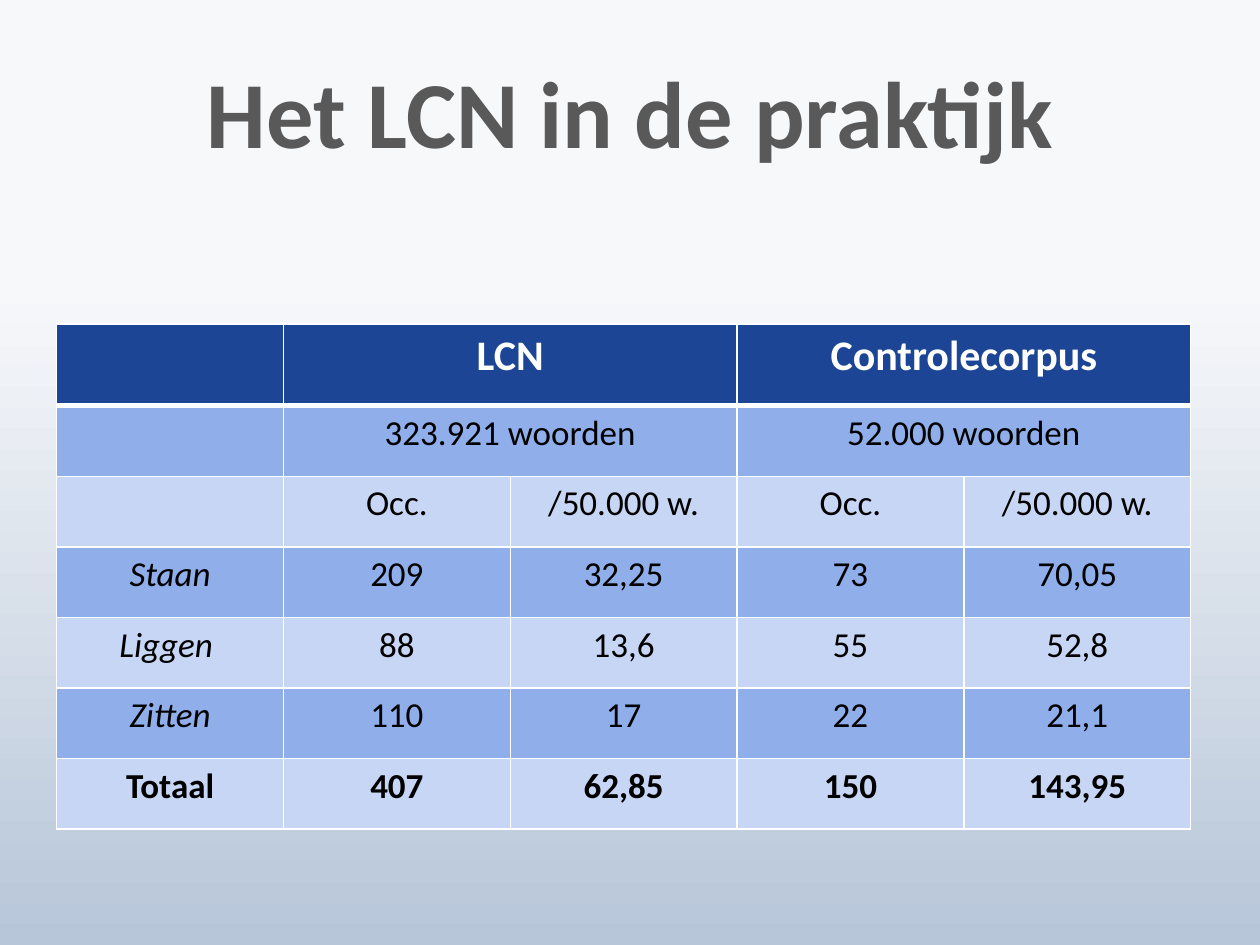
from dataclasses import dataclass

from lxml import etree
from pptx import Presentation
from pptx.dml.color import RGBColor
from pptx.enum.text import MSO_ANCHOR, PP_ALIGN
from pptx.oxml.ns import qn
from pptx.slide import Slide
from pptx.table import Table, _Cell
from pptx.util import Emu, Inches, Pt

CENTER = PP_ALIGN.CENTER
MIDDLE = MSO_ANCHOR.MIDDLE

WHITE = RGBColor(0xFF, 0xFF, 0xFF)
BLACK = RGBColor(0x00, 0x00, 0x00)
TITLE_GREY = RGBColor(0x59, 0x59, 0x59)
HEADER_BLUE = RGBColor(0x1C, 0x45, 0x96)
BAND_COLORS = (RGBColor(0xC7, 0xD6, 0xF5), RGBColor(0x8F, 0xAE, 0xEA))
BACKGROUND_STOPS = (
    (0.3, RGBColor(0xF7, 0xF8, 0xFA)),
    (1.0, RGBColor(0xB7, 0xC6, 0xD9)),
)

FONT_NAME = "Calibri"
SLIDE_WIDTH, SLIDE_HEIGHT = Inches(10), Inches(7.5)
COLUMN_COUNT = 5
COLUMN_WIDTH = Inches(1.8)
TABLE_LEFT, TABLE_TOP = Inches(0.45), Inches(2.57)
HEADER_HEIGHT, ROW_HEIGHT = Inches(0.65), Inches(0.56)
THIN_LINE, HEADER_LINE = Pt(1), Pt(3)


@dataclass(frozen=True)
class TableRow:
    texts: tuple[str, ...]
    column_span: int = 1
    bold: bool = False
    italic_label: bool = False


ROWS = (
    TableRow(("", "LCN", "Controlecorpus"), column_span=2, bold=True),
    TableRow(("", "323.921 woorden", "52.000 woorden"), column_span=2),
    TableRow(("", "Occ.", "/50.000 w.", "Occ.", "/50.000 w.")),
    TableRow(("Staan", "209", "32,25", "73", "70,05"), italic_label=True),
    TableRow(("Liggen ", "88", "13,6", "55", "52,8"), italic_label=True),
    TableRow(("Zitten", "110", "17", "22", "21,1"), italic_label=True),
    TableRow(("Totaal", "407", "62,85", "150", "143,95"), bold=True),
)


def format_font(font, color: RGBColor, **values) -> None:
    for name, value in {"name": FONT_NAME, **values}.items():
        setattr(font, name, value)
    font.color.rgb = color


def paint_background(slide: Slide) -> None:
    fill = slide.background.fill
    fill.gradient()
    fill.gradient_angle = 270
    for stop, (position, color) in zip(fill.gradient_stops, BACKGROUND_STOPS):
        stop.position = position
        stop.color.rgb = color


def add_title(slide: Slide, text: str) -> None:
    title = slide.shapes.title
    title.left, title.top = Inches(1), Inches(0.25)
    title.width, title.height = Inches(8), Inches(1.38)
    title.text_frame.vertical_anchor = MIDDLE
    paragraph = title.text_frame.paragraphs[0]
    paragraph.alignment = CENTER
    paragraph.line_spacing = Pt(56)
    run = paragraph.add_run()
    run.text = text
    format_font(run.font, TITLE_GREY, size=Pt(54), bold=True)


def set_borders(cell: _Cell, widths: dict[str, Emu]) -> None:
    """Draw white cell borders; the fill has to be set afterwards."""
    properties = cell._tc.get_or_add_tcPr()
    for side in ("L", "R", "T", "B"):
        width = widths.get(side, THIN_LINE)
        line = etree.SubElement(properties, qn(f"a:ln{side}"), w=str(int(width)))
        solid_fill = etree.SubElement(line, qn("a:solidFill"))
        etree.SubElement(solid_fill, qn("a:srgbClr"), val=str(WHITE))


def fill_row(table: Table, row_index: int, row: TableRow) -> None:
    is_header = row_index == 0
    background = HEADER_BLUE if is_header else BAND_COLORS[row_index % 2]
    widths = {0: {"B": HEADER_LINE}, 1: {"T": HEADER_LINE}}.get(row_index, {})
    for cell in table.rows[row_index].cells:
        set_borders(cell, widths)
        cell.fill.solid()
        cell.fill.fore_color.rgb = background

    for index, text in enumerate(row.texts):
        column = 0 if index == 0 else 1 + (index - 1) * row.column_span
        cell = table.cell(row_index, column)
        if index > 0 and row.column_span > 1:
            cell.merge(table.cell(row_index, column + row.column_span - 1))
        if not text:
            continue
        paragraph = cell.text_frame.paragraphs[0]
        paragraph.alignment = CENTER
        run = paragraph.add_run()
        run.text = text
        format_font(
            run.font,
            WHITE if is_header else BLACK,
            size=Pt(24 if is_header else 20),
            bold=row.bold,
            italic=row.italic_label and index == 0,
        )


def add_corpus_table(slide: Slide) -> None:
    height = HEADER_HEIGHT + ROW_HEIGHT * (len(ROWS) - 1)
    table = slide.shapes.add_table(
        len(ROWS), COLUMN_COUNT, TABLE_LEFT, TABLE_TOP,
        COLUMN_WIDTH * COLUMN_COUNT, height,
    ).table
    table.first_row = table.horz_banding = False
    for column in table.columns:
        column.width = COLUMN_WIDTH
    for index, row in enumerate(ROWS):
        table.rows[index].height = ROW_HEIGHT if index else HEADER_HEIGHT
        fill_row(table, index, row)


def main() -> None:
    presentation = Presentation()
    presentation.slide_width = SLIDE_WIDTH
    presentation.slide_height = SLIDE_HEIGHT
    title_only = presentation.slide_layouts.get_by_name("Title Only")
    slide = presentation.slides.add_slide(title_only)
    paint_background(slide)
    add_title(slide, "Het LCN in de praktijk")
    add_corpus_table(slide)
    presentation.save("out.pptx")


if __name__ == "__main__":
    main()
